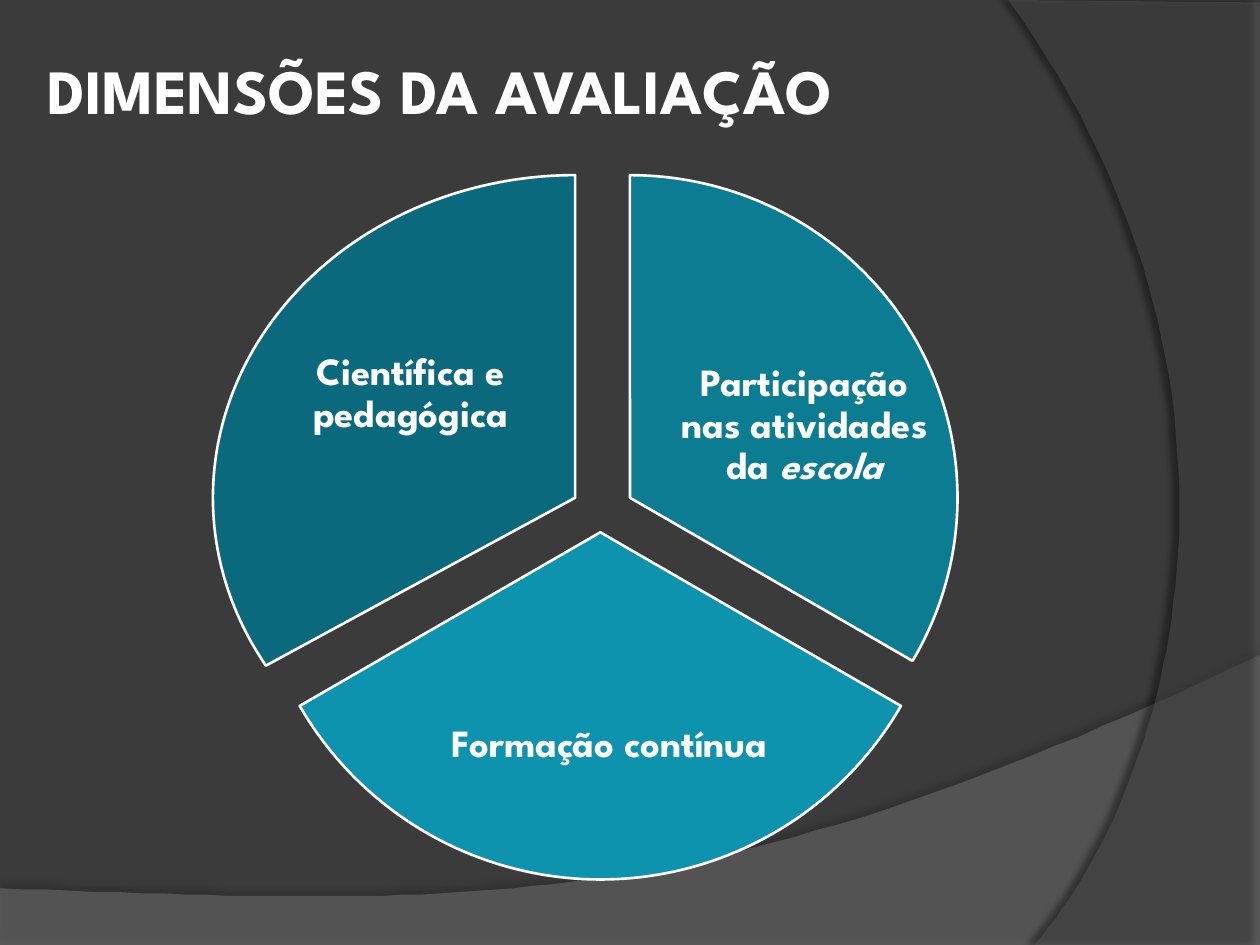
from lxml.etree import SubElement
from pptx import Presentation
from pptx.dml.color import RGBColor
from pptx.enum.shapes import MSO_SHAPE
from pptx.enum.text import MSO_ANCHOR, MSO_AUTO_SIZE, PP_ALIGN
from pptx.oxml.ns import qn
from pptx.util import Emu, Pt

PX = 9144  # EMU per px, 100 px to the inch
FONT = "League Spartan"
COLOURS = {
    "background": "3B3B3B",
    "lower wave": "7F7F7F",
    "right wave": "5E5E5E",
    "shadow": "000000",
    "white": "FFFFFF",
    "dark teal": "0A697C",
    "teal": "0C7C92",
    "light teal": "0E93AE",
}


def colour(name):
    return RGBColor.from_string(COLOURS[name])


def px(*lengths):
    return [Emu(length * PX) for length in lengths]


def curve(start, control_1, control_2, end, steps=60):
    """Points along a cubic Bézier curve, without its start."""
    points = []
    for step in range(1, steps + 1):
        t = step / steps
        weights = ((1 - t) ** 3, 3 * t * (1 - t) ** 2, 3 * t * t * (1 - t), t ** 3)
        points.append(tuple(
            sum(weight * value for weight, value in zip(weights, values))
            for values in zip(start, control_1, control_2, end)
        ))
    return points


class SlideBuilder:
    def __init__(self, deck):
        self.page = deck.slides.add_slide(deck.slide_layouts[5])
        self.shapes = self.page.shapes
        self.page.background.fill.solid()
        self.page.background.fill.fore_color.rgb = colour("background")

    def style_font(self, para, size):
        para.font.name = FONT
        para.font.size = Pt(size)
        para.font.bold = True
        para.font.color.rgb = colour("white")

    def title(self, text, left, top, width, height):
        box = self.shapes.title
        box.left, box.top, box.width, box.height = px(left, top, width, height)
        frame = box.text_frame
        frame.text = text
        frame.auto_size = MSO_AUTO_SIZE.NONE
        frame.vertical_anchor = MSO_ANCHOR.TOP
        para = frame.paragraphs[0]
        para.alignment = PP_ALIGN.LEFT
        self.style_font(para, 36)

    def wave(self, points, fill, opacity, shadow_distance, shadow_angle):
        """Translucent background shape with a soft shadow; opacity in percent."""
        builder = self.shapes.build_freeform(*points[0], scale=PX)
        builder.add_line_segments(points[1:])
        shape = builder.convert_to_shape()
        shape.line.fill.background()
        shape.fill.solid()
        shape.fill.fore_color.rgb = colour(fill)
        properties = shape.fill._xPr
        fill_colour = properties.find(qn("a:solidFill")).find(qn("a:srgbClr"))
        SubElement(fill_colour, qn("a:alpha"), val=str(opacity * 1000))
        shape.shadow.inherit = False
        shadow = SubElement(
            properties.find(qn("a:effectLst")), qn("a:outerShdw"),
            blurRad=str(Pt(4)), dist=str(Pt(shadow_distance)),
            dir=str(shadow_angle * 60000), algn="ctr", rotWithShape="0")
        shadow_colour = SubElement(shadow, qn("a:srgbClr"), val=COLOURS["shadow"])
        SubElement(shadow_colour, qn("a:alpha"), val=str(40000))

    def sector(self, bounds, start, end, fill):
        """Pie sector between two angles, in degrees clockwise from the right."""
        shape = self.shapes.add_shape(MSO_SHAPE.PIE, *px(*bounds))
        shape.shadow.inherit = False
        for index, angle in enumerate((start, end)):
            shape.adjustments[index] = angle * 0.6  # 60000 units per degree
        shape.fill.solid()
        shape.fill.fore_color.rgb = colour(fill)
        shape.line.color.rgb = colour("white")
        shape.line.width = Pt(1.5)

    def label(self, bounds, text, italic_text):
        frame = self.shapes.add_textbox(*px(*bounds)).text_frame
        frame.word_wrap = True
        frame.vertical_anchor = MSO_ANCHOR.MIDDLE
        frame.margin_left = frame.margin_right = 0
        frame.margin_top = frame.margin_bottom = 0
        para = frame.paragraphs[0]
        para.alignment = PP_ALIGN.CENTER
        para.line_spacing = 0.9
        self.style_font(para, 22)
        para.add_run().text = text
        if italic_text:
            span = para.add_run()
            span.text = italic_text
            span.font.italic = True


def main():
    deck = Presentation()
    deck.slide_width, deck.slide_height = px(1000, 750)
    slide = SlideBuilder(deck)

    lower_edge = curve((1000, 520), (559, 729), (391, 719), (0, 705))
    slide.wave([(0, 705), (0, 750), (1000, 750), (1000, 520)] + lower_edge,
               "lower wave", 45, 3.5, 270)
    right_edge = curve((821, 750), (935, 619), (1018, 300), (800, 0))
    slide.wave([(1000, 2), (1000, 750), (821, 750)] + right_edge + [(1000, 2)],
               "right wave", 40, 4, 180)

    slide.title("DIMENSÕES DA AVALIAÇÃO", 28, 36, 972, 71)

    dimensions = [
        ((169, 139, 575, 512), 151.5, 270, "dark teal",
         (209, 218, 234, 189), "Científica e pedagógica", ""),
        ((240, 139, 520, 512), 270, 30, "teal",
         (539, 236, 199, 204), "Participação nas atividades da ", "escola"),
        ((201, 147, 551, 551), 30, 150, "light teal",
         (356, 504, 256, 175), "Formação contínua", ""),
    ]
    for bounds, start, end, fill, label_bounds, text, italic_text in dimensions:
        slide.sector(bounds, start, end, fill)
        slide.label(label_bounds, text, italic_text)

    deck.save("out.pptx")


if __name__ == "__main__":
    main()
